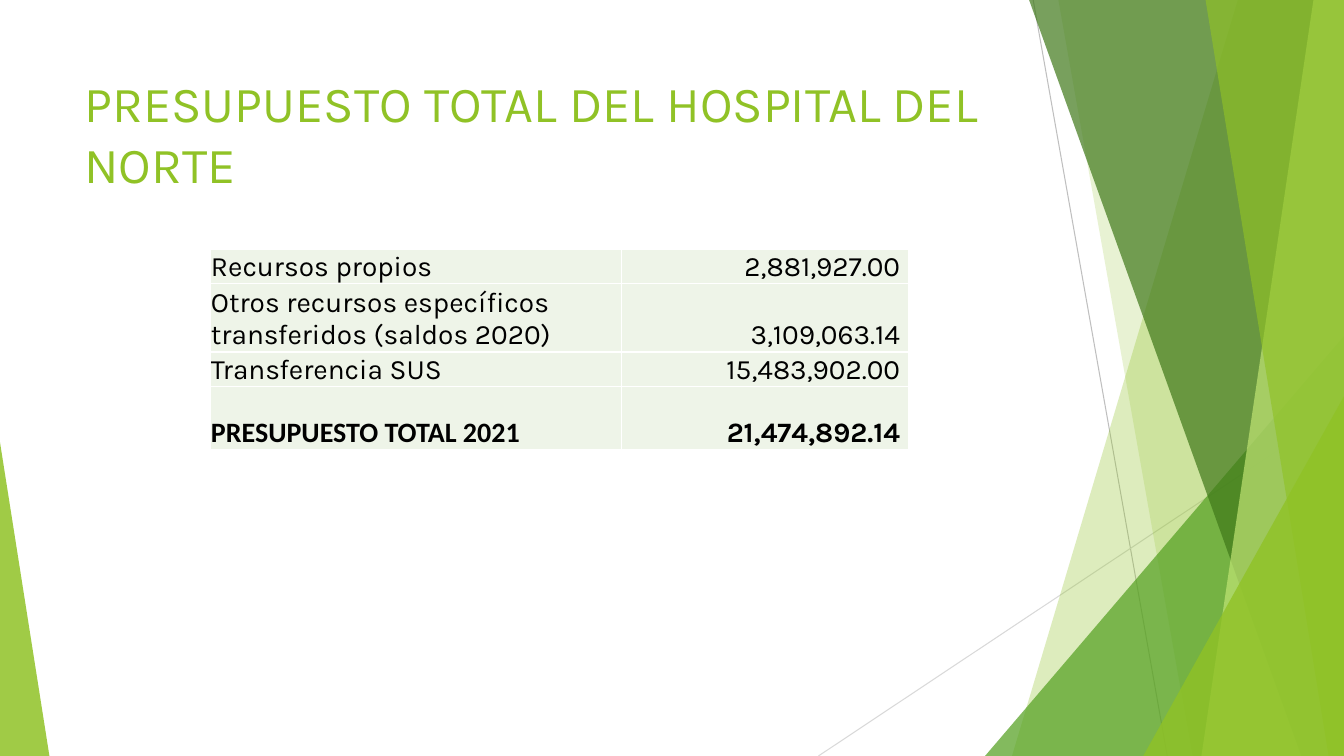
from lxml import etree
from pptx import Presentation
from pptx.dml import color
from pptx.enum import shapes, text
from pptx.oxml import ns
from pptx.util import Pt

WIDTH, HEIGHT = 960, 540
GREEN = "90C226"
SHARDS = [
    (884.2, 722.9, GREEN, 30),
    (756, 851.8, GREEN, 20),
    (735.1, 929.5, "3F7819", 70),
    (938.2, 858.2, "C0E474", 70),
    (861.1, 949, GREEN, 65),
]
BUDGET = [
    ("Recursos propios", "2,881,927.00", 23),
    ("Otros recursos específicos transferidos (saldos 2020)", "3,109,063.14", 47),
    ("Transferencia SUS", "15,483,902.00", 24),
    ("PRESUPUESTO TOTAL 2021", "21,474,892.14", 45),
]


def rgb(value):
    return color.RGBColor.from_string(value)


def paint(shape, fill, opacity):
    shape.shadow.inherit = False
    shape.line.fill.background()
    shape.fill.solid()
    shape.fill.fore_color.rgb = rgb(fill)
    tint = shape.fill._xPr.find(".//" + ns.qn("a:srgbClr"))
    etree.SubElement(tint, ns.qn("a:alpha"), val=str(opacity * 1000))


def add_line(page, start, end, stroke):
    line = page.shapes.add_connector(
        shapes.MSO_CONNECTOR.STRAIGHT, *map(Pt, start + end))
    line.line.color.rgb = rgb(stroke)
    line.line.width = Pt(0.75)
    etree.SubElement(line._element.spPr, ns.qn("a:effectLst"))


def add_shard(page, top_left, bottom_left, fill, opacity):
    builder = page.shapes.build_freeform(Pt(top_left), 0)
    corners = [(WIDTH, 0), (WIDTH, HEIGHT), (bottom_left, HEIGHT)]
    builder.add_line_segments([(Pt(x), Pt(y)) for x, y in corners])
    paint(builder.convert_to_shape(), fill, opacity)


def add_triangle(page, left, top, width, apex, fill, opacity):
    triangle = page.shapes.add_shape(
        shapes.MSO_SHAPE.ISOSCELES_TRIANGLE,
        Pt(left), Pt(top), Pt(width), Pt(HEIGHT - top))
    triangle.adjustments[0] = apex
    paint(triangle, fill, opacity)


def format_text(para, size, fill, font="Karla", bold=False):
    for span in para.runs:
        span.font.name = font
        span.font.size = Pt(size)
        span.font.bold = bold
        span.font.color.rgb = rgb(fill)


def add_title(page, words):
    box = page.shapes.add_textbox(Pt(53.3), Pt(48), Pt(676.8), Pt(104))
    box.text_frame.word_wrap = True
    box.text_frame.text = words
    format_text(box.text_frame.paragraphs[0], 36, GREEN)


def add_borders(cell):
    properties = cell._tc.get_or_add_tcPr()
    for side in ("lnL", "lnR", "lnT", "lnB"):
        border = etree.SubElement(properties, ns.qn("a:" + side), w=str(Pt(1)))
        fill = etree.SubElement(border, ns.qn("a:solidFill"))
        etree.SubElement(fill, ns.qn("a:srgbClr"), val="FFFFFF")


def fill_cell(cell, words, font, bold, is_amount):
    add_borders(cell)
    cell.fill.solid()
    cell.fill.fore_color.rgb = rgb("EEF4E8")
    cell.vertical_anchor = text.MSO_ANCHOR.BOTTOM
    cell.margin_left = cell.margin_top = Pt(0.7)
    cell.margin_right = Pt(6 if is_amount else 0.7)
    cell.margin_bottom = 0
    cell.text_frame.text = words
    para = cell.text_frame.paragraphs[0]
    if is_amount:
        para.alignment = text.PP_ALIGN.RIGHT
    format_text(para, 20, "000000", font, bold)


def add_budget(page):
    height = sum(row[2] for row in BUDGET)
    table = page.shapes.add_table(
        len(BUDGET), 2, Pt(150), Pt(178), Pt(499), Pt(height)).table
    for column, width in zip(table.columns, (293.8, 205.2)):
        column.width = Pt(width)
    for index, (label, amount, row_height) in enumerate(BUDGET):
        table.rows[index].height = Pt(row_height)
        total = index == len(BUDGET) - 1
        label_font = "Calibri" if total else "Karla"
        fill_cell(table.cell(index, 0), label, label_font, total, False)
        fill_cell(table.cell(index, 1), amount, "Karla", total, True)


def main():
    deck = Presentation()
    deck.slide_width, deck.slide_height = Pt(WIDTH), Pt(HEIGHT)
    page = deck.slides.add_slide(deck.slide_layouts[6])
    add_line(page, (738, 0), (833.8, HEIGHT), "BFBFBF")
    add_line(page, (WIDTH, 290.2), (584.6, HEIGHT), "D9D9D9")
    for shard in SHARDS[:2]:
        add_shard(page, *shard)
    add_triangle(page, 703.6, 240, 256.4, 1, "54A021", 72)
    for shard in SHARDS[2:]:
        add_shard(page, *shard)
    add_triangle(page, 816.6, 283, 143.4, 1, GREEN, 80)
    add_triangle(page, 0, 316, 35.3, 0, GREEN, 85)
    add_title(page, "PRESUPUESTO TOTAL DEL HOSPITAL DEL NORTE")
    add_budget(page)
    deck.save("out.pptx")


if __name__ == "__main__":
    main()
